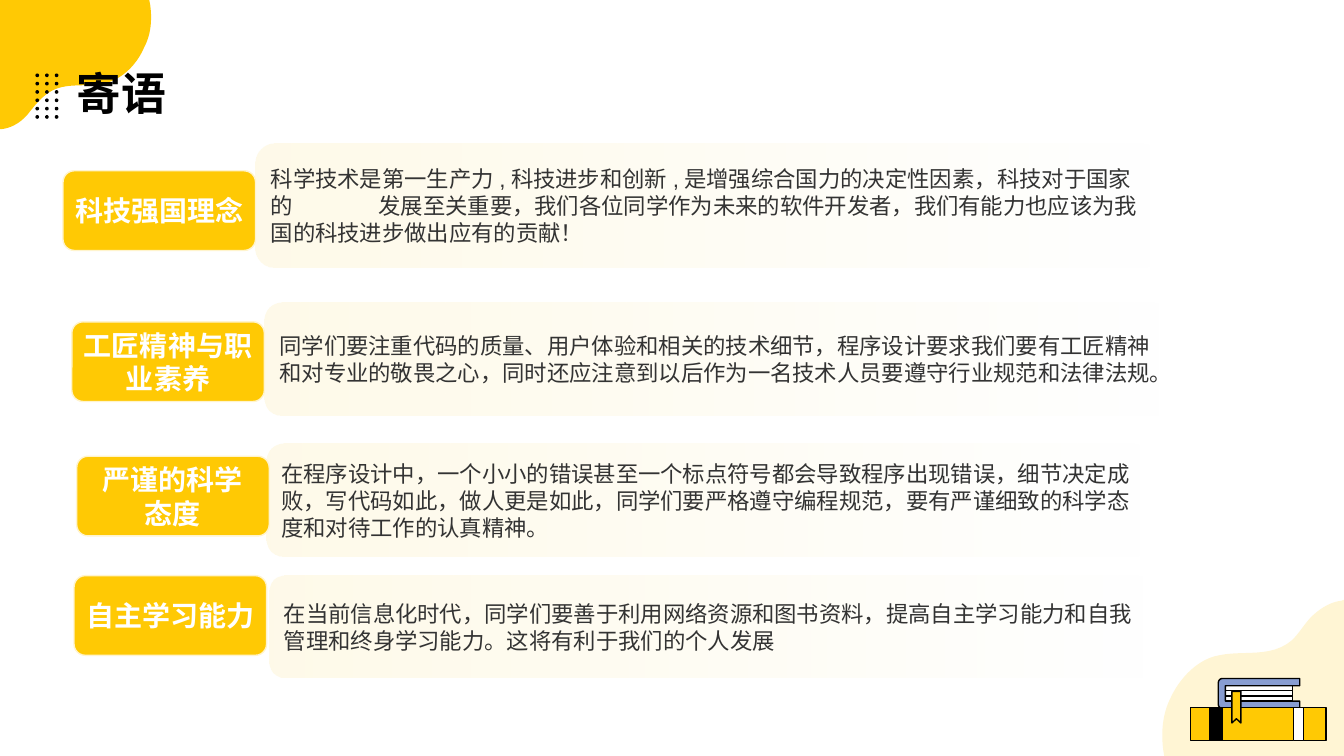
from math import cos, pi, sin

from lxml.etree import SubElement
from pptx import Presentation
from pptx.dml.color import RGBColor
from pptx.enum.shapes import MSO_CONNECTOR, MSO_SHAPE
from pptx.enum.text import MSO_ANCHOR, PP_ALIGN
from pptx.oxml.ns import qn
from pptx.util import Pt

YELLOW = RGBColor(0xFF, 0xC9, 0x04)
CREAM = RGBColor(0xFF, 0xF4, 0xCD)
BLUE = RGBColor(0x88, 0x9D, 0xD2)
BLACK = RGBColor(0, 0, 0)
WHITE = RGBColor(0xFF, 0xFF, 0xFF)
GREY = RGBColor(0x33, 0x33, 0x33)
CJK_FONT = "Noto Sans CJK SC"

# Content: label lines, label (left, top), panel (left, top, width, height), message runs
TITLE = "寄语"
TOPICS = [
    (["工匠精神与职业素养"], (51.3, 229.9), (188.9, 216, 647.3, 80.6),
     [("同学们要注重代码的质量、用户体验和相关的技术细节，程序设计要求我们要有工匠精神"
       "和对专业的敬畏之心，同时还应注意到以后作为一名技术人员要遵守行业规范和法律法规。", CJK_FONT)]),
    (["科技强国理念"], (45, 122), (182.3, 102.6, 647.3, 88.6),
     [("科学技术是第一生产力,科技进步和创新,是增强综合国力的决定性因素，", "Arial"),
      ("科技对于国家的\t发展至关重要，我们各位同学作为未来的软件开发者，"
       "我们有能力也应该为我国的科技进步做出应有的贡献！", CJK_FONT)]),
    (["严谨的科学", "态度"], (54.8, 325.9), (190.3, 317.2, 631.4, 80.6),
     [("在程序设计中，一个小小的错误甚至一个标点符号都会导致程序出现错误，细节决定成败，"
       "写代码如此，做人更是如此，同学们要严格遵守编程规范，"
       "要有严谨细致的科学态度和对待工作的认真精神。", CJK_FONT)]),
    (["自主学习能力"], (52.9, 411.2), (192.4, 411.4, 631.4, 72.7),
     [("在当前信息化时代，同学们要善于利用网络资源和图书资料，"
       "提高自主学习能力和自我管理和终身学习能力。这将有利于我们的个人发展", CJK_FONT)]),
]
LABEL_SIZE = (137.5, 56.9)
GAP_TAB = 77

# Outlines: a pair is a corner, a triple of pairs is a curve
TOP_BLOB = [
    (0, 92.2), (1.4, 92.2), ((7.9, 91.4), (14.4, 87.8), (19.4, 82.1)),
    ((23, 77.8), (26.6, 72.7), (31, 69.1)), ((43.2, 57.6), (59, 62.6), (73.4, 59.8)),
    ((85.7, 57.6), (97.2, 47.5), (103, 33.8)), ((108, 24.5), (108.7, 13.7), (107.3, 3.6)),
    (106.6, 0), (0, 0)]
BOTTOM_BLOB = [
    (960, 428.4), (958.3, 429.1), ((950.4, 429.8), (942.5, 434.9), (936.7, 440.6)),
    ((931.7, 445.7), (928.1, 452.2), (923, 457.2)),
    ((907.9, 470.2), (887.8, 464.4), (871.2, 468)),
    ((856.8, 470.2), (843.1, 483.1), (835.9, 499)),
    ((830.2, 510.5), (829.4, 523.4), (830.9, 535.7)), (831.6, 540), (960, 540)]
BOOK_COVER = [
    (928.4, 506), (873.6, 506), ((871.4, 506), (870.2, 504.7), (870.2, 502.6)),
    (870.2, 488.2), ((870.2, 486), (871.4, 484.6), (873.6, 484.6)),
    (928.4, 484.6), (928.4, 489.8), (875.3, 489.8), (875.3, 500.8), (928.4, 500.8)]
BOOKMARK = [(880, 493.8), (886.4, 493.8), (886.4, 516.4), (883.2, 513.4), (880, 516.4)]

presentation = Presentation()
presentation.slide_width, presentation.slide_height = Pt(960), Pt(540)
slide = presentation.slides.add_slide(presentation.slide_layouts[6])


def paint(shape, fill, line=None):
    shape.shadow.inherit = False
    if fill is not None:
        shape.fill.solid()
        shape.fill.fore_color.rgb = fill
    if line is None:
        shape.line.fill.background()
    else:
        shape.line.color.rgb = line
        shape.line.width = Pt(1)
    return shape


def set_alpha(color_element, percent):
    SubElement(color_element, qn("a:alpha"), val=str(percent * 1000))


def add_box(kind, box, fill, line=None):
    return paint(slide.shapes.add_shape(kind, *map(Pt, box)), fill, line)


def flatten(steps, pieces=12):
    points = []
    for step in steps:
        if len(step) == 2:
            points.append(step)
            continue
        curve = (points[-1], *step)
        for piece in range(1, pieces + 1):
            t = piece / pieces
            weights = ((1 - t) ** 3, 3 * t * (1 - t) ** 2, 3 * t * t * (1 - t), t ** 3)
            points.append(tuple(sum(weight * point[axis] for weight, point in zip(weights, curve))
                                for axis in (0, 1)))
    return points


def add_outline(contours, fill, line=None):
    builder = None
    for contour in contours:
        corners = [(Pt(x), Pt(y)) for x, y in flatten(contour)]
        if builder is None:
            builder = slide.shapes.build_freeform(*corners[0])
        else:
            builder.move_to(*corners[0])
        builder.add_line_segments(corners[1:], close=True)
    return paint(builder.convert_to_shape(), fill, line)


def circle(center_x, center_y, radius, sides=16):
    angles = [2 * pi * side / sides for side in range(sides)]
    return [(center_x + radius * cos(angle), center_y + radius * sin(angle)) for angle in angles]


def set_text(shape, paragraphs, size, color, bold=False, align=PP_ALIGN.LEFT,
             anchor=MSO_ANCHOR.MIDDLE, insets=(0, 0)):
    """Each paragraph is a list of (text, latin font) runs."""
    frame = shape.text_frame
    frame.word_wrap = True
    frame.vertical_anchor = anchor
    frame.margin_left = frame.margin_right = Pt(insets[0])
    frame.margin_top = frame.margin_bottom = Pt(insets[1])
    for index, runs in enumerate(paragraphs):
        paragraph = frame.add_paragraph() if index else frame.paragraphs[0]
        paragraph.alignment = align
        paragraph.font.size, paragraph.font.bold = Pt(size), bold
        paragraph.font.color.rgb = color
        for text, font_name in runs:
            run = paragraph.add_run()
            run.text = text
            run.font.name = font_name
            SubElement(run.font._element, qn("a:ea"), typeface=CJK_FONT)
            if "\t" in text:
                properties = paragraph._p.get_or_add_pPr()
                tab_list = properties.makeelement(qn("a:tabLst"))
                SubElement(tab_list, qn("a:tab"), pos=str(Pt(GAP_TAB)), algn="l")
                properties.insert(0, tab_list)


# Corner blobs and dot grid
bottom_blob = add_outline([BOTTOM_BLOB], YELLOW)
set_alpha(next(bottom_blob._element.iter(qn("a:srgbClr"))), 17)
add_outline([TOP_BLOB], YELLOW)
add_outline([circle(26.6 + 6.9 * column, 53.8 + 5.95 * row, 1.3)
             for row in range(6) for column in range(3)], BLACK)

# Books
add_box(MSO_SHAPE.RECTANGLE, (875.3, 489.8, 48, 11), WHITE, BLACK)
for page_y in (493.2, 497.2):
    page = slide.shapes.add_connector(MSO_CONNECTOR.STRAIGHT, Pt(875.3), Pt(page_y),
                                      Pt(923.3), Pt(page_y))
    page.line.color.rgb, page.line.width = BLACK, Pt(1)
    SubElement(page._element.spPr, qn("a:effectLst"))
add_outline([BOOK_COVER], BLUE, BLACK)
for left, width, fill in ((850.6, 96.6, YELLOW), (923.9, 7.2, WHITE), (863.8, 9.2, BLACK)):
    add_box(MSO_SHAPE.RECTANGLE, (left, 505.4, width, 23.8), fill, BLACK)
add_outline([BOOKMARK], YELLOW, BLACK)

# Title
title = slide.shapes.add_textbox(Pt(54.7), Pt(28.1), Pt(850.3), Pt(56.9))
set_text(title, [[(TITLE, CJK_FONT)]], 32, BLACK, bold=True, anchor=MSO_ANCHOR.BOTTOM)

# Topics: fading panel with message, then its label
for label_lines, label_place, panel_box, message in TOPICS:
    panel = add_box(MSO_SHAPE.ROUNDED_RECTANGLE, panel_box, None)
    panel.adjustments[0] = 0.153
    panel.fill.gradient()
    panel.fill.gradient_angle = 180
    for stop, opacity in zip(panel.fill.gradient_stops, (0, 44)):
        stop.color.rgb = CREAM
        set_alpha(stop._gs.find(qn("a:srgbClr")), opacity)
    set_text(panel, [message], 16, GREY, insets=(7.2, 3.6))

    label = add_box(MSO_SHAPE.ROUNDED_RECTANGLE, label_place + LABEL_SIZE, YELLOW, CREAM)
    label.adjustments[0] = 0.141
    set_text(label, [[(line, CJK_FONT)] for line in label_lines], 20, WHITE,
             bold=True, align=PP_ALIGN.CENTER)

presentation.save("out.pptx")
